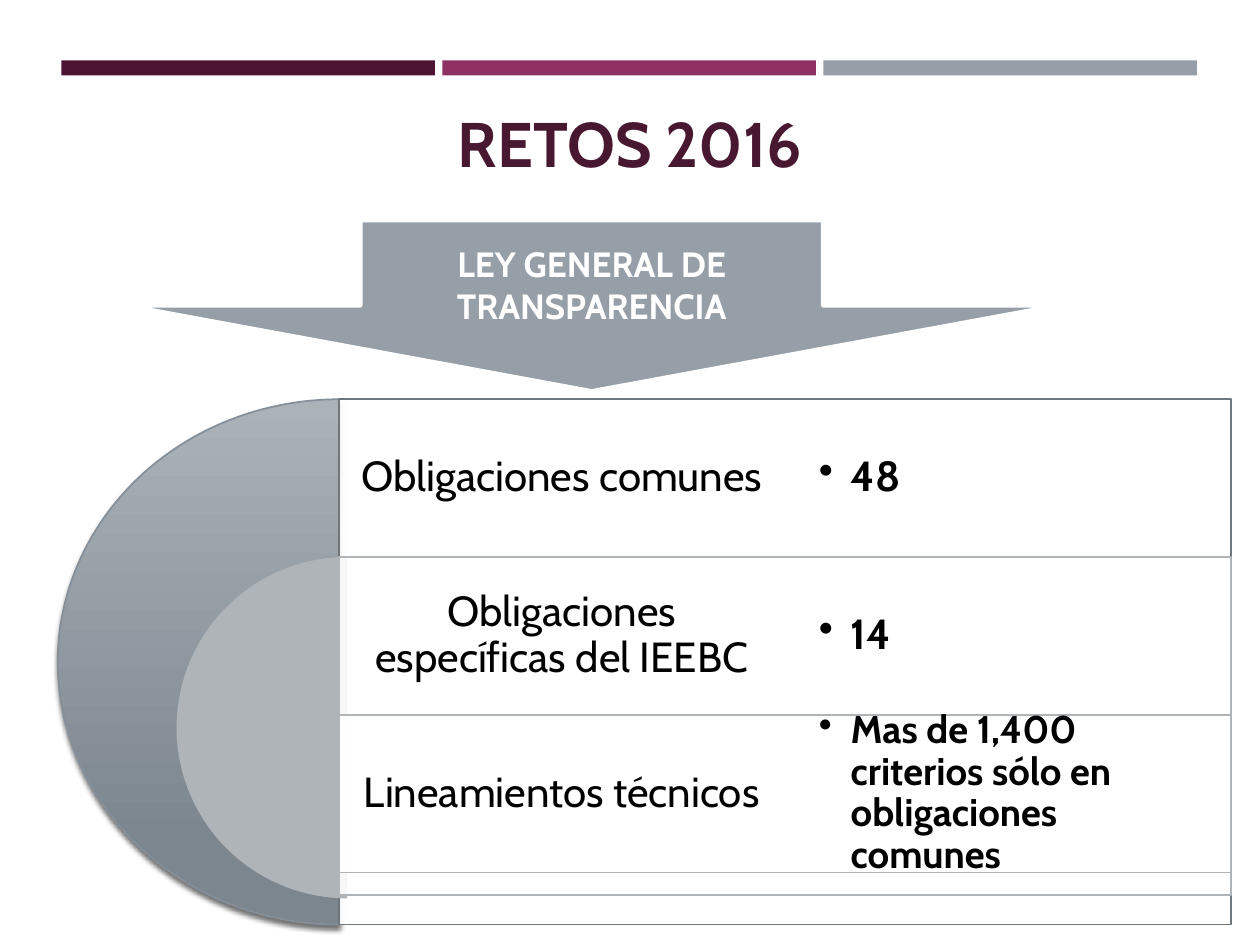
from dataclasses import dataclass

from lxml.etree import SubElement
from pptx import Presentation
from pptx.dml.color import RGBColor
from pptx.enum.shapes import MSO_SHAPE
from pptx.enum.text import MSO_ANCHOR, PP_ALIGN
from pptx.oxml.ns import qn
from pptx.util import Cm, Pt


@dataclass(frozen=True)
class Theme:
    font: str = "Cabin"
    plum: str = "4D1434"
    magenta: str = "903163"
    grey: str = "969FA7"
    title: str = "481831"
    white: str = "FFFFFF"
    black: str = "000000"
    pie: str = "AFB4B9"
    pie_light: str = "ABB2B8"
    pie_dark: str = "7C868F"
    pie_line: str = "858F99"
    outer_line: str = "6F767C"
    title_size: int = 36
    arrow_size: int = 20
    body_size: int = 24
    small_size: int = 22


@dataclass(frozen=True)
class Level:
    """One row of the target diagram; lengths in centimetres."""
    label: str
    value: str
    value_size: int
    pie_center: float
    pie_width: float
    pie_height: float
    panel_height: float
    panel_line: str


THEME = Theme()
LEVELS = (
    Level("Obligaciones comunes", "48", THEME.body_size,
          6.84, 11.35, 10.59, 10.59, THEME.outer_line),
    Level("Obligaciones específicas del IEEBC", "14", THEME.body_size,
          7.0, 6.88, 6.88, 6.81, THEME.pie),
    Level("Lineamientos técnicos",
          "Mas de 1,400 criterios sólo en obligaciones comunes",
          THEME.small_size, 6.84, 3.18, 3.18, 3.18, THEME.pie),
)
PANEL_LEFT, PANEL_TOP, PANEL_WIDTH = 6.83, 8.05, 17.98
ROW_HEIGHT = 3.18
COLUMN_WIDTH = PANEL_WIDTH / 2


def color(value: str) -> RGBColor:
    return RGBColor.from_string(value)


def add_shape(page, kind, left: float, top: float, width: float, height: float,
              fill: str, line: str | None = None, line_width: float = 1):
    shape = page.shapes.add_shape(kind, Cm(left), Cm(top), Cm(width), Cm(height))
    shape.shadow.inherit = False
    shape.fill.solid()
    shape.fill.fore_color.rgb = color(fill)
    if line:
        shape.line.color.rgb = color(line)
        shape.line.width = Pt(line_width)
    else:
        shape.line.fill.background()
    return shape


def write(frame, text: str, size: int, ink: str, bold: bool = False,
          align=PP_ALIGN.CENTER, anchor=MSO_ANCHOR.MIDDLE):
    frame.word_wrap = True
    frame.vertical_anchor = anchor
    frame.text = text
    paragraph = frame.paragraphs[0]
    paragraph.alignment = align
    font = paragraph.runs[0].font
    font.name, font.size, font.bold = THEME.font, Pt(size), bold
    font.color.rgb = color(ink)
    return paragraph


def add_text(page, left: float, top: float, margin: float, text: str, size: int,
             bold: bool = False, align=PP_ALIGN.CENTER):
    box = page.shapes.add_textbox(Cm(left), Cm(top), Cm(COLUMN_WIDTH), Cm(ROW_HEIGHT))
    frame = box.text_frame
    frame.margin_left = frame.margin_right = Cm(margin)
    frame.margin_top = frame.margin_bottom = Cm(margin)
    paragraph = write(frame, text, size, THEME.black, bold, align)
    paragraph.line_spacing = 0.9
    return paragraph


def add_bullet(paragraph) -> None:
    properties = paragraph._p.get_or_add_pPr()
    properties.set("marL", str(Cm(0.64)))
    properties.set("indent", str(-Cm(0.64)))
    SubElement(properties, qn("a:buChar"), char="•")


def shade_outer_pie(pie) -> None:
    """Give the largest half disc its gradient, outline and shadow."""
    pie.fill.gradient()
    pie.fill.gradient_angle = 270
    stops = ((0, THEME.pie_light), (0.84, THEME.pie_dark))
    for stop, (position, shade) in zip(pie.fill.gradient_stops, stops):
        stop.position = position
        stop.color.rgb = color(shade)
    pie.line.color.rgb = color(THEME.pie_line)
    pie.line.width = Pt(1)
    effects = pie._element.spPr.find(qn("a:effectLst"))
    shadow = SubElement(effects, qn("a:outerShdw"), blurRad=str(Pt(3)),
                        dist=str(Pt(2)), dir="5400000", rotWithShape="0")
    tone = SubElement(shadow, qn("a:srgbClr"), val=THEME.black)
    SubElement(tone, qn("a:alpha"), val="55000")


def add_level(page, index: int, level: Level) -> None:
    top = PANEL_TOP + index * ROW_HEIGHT
    pie = add_shape(page, MSO_SHAPE.PIE, level.pie_center - level.pie_width / 2, top,
                    level.pie_width, level.pie_height, THEME.pie)
    # Left half: from 90 to 270 degrees
    pie.adjustments[0], pie.adjustments[1] = 54, 162
    if index == 0:
        shade_outer_pie(pie)

    panel = add_shape(page, MSO_SHAPE.RECTANGLE, PANEL_LEFT, top, PANEL_WIDTH,
                      level.panel_height, THEME.white, level.panel_line)
    tone = panel._element.spPr.find(qn("a:solidFill"))[0]
    SubElement(tone, qn("a:alpha"), val="90000")

    add_text(page, PANEL_LEFT, top, 0.25, level.label, THEME.body_size)
    value = add_text(page, PANEL_LEFT + COLUMN_WIDTH, top, 0.69, level.value,
                     level.value_size, True, PP_ALIGN.LEFT)
    add_bullet(value)


def main() -> None:
    deck = Presentation()
    deck.slide_width, deck.slide_height = Cm(25.4), Cm(19.05)
    page = deck.slides.add_slide(deck.slide_layouts[5])

    # Three bars along the top
    for index, fill in enumerate((THEME.plum, THEME.magenta, THEME.grey)):
        add_shape(page, MSO_SHAPE.RECTANGLE, 1.24 + index * 7.68, 1.22, 7.53, 0.3, fill)

    # Title
    title = page.shapes.title
    title.left, title.top, title.width, title.height = Cm(0), Cm(1.9), Cm(25.4), Cm(1.86)
    write(title.text_frame, "RETOS 2016", THEME.title_size, THEME.title, True,
          anchor=MSO_ANCHOR.BOTTOM)

    # Arrow leading to the diagram
    arrow = add_shape(page, MSO_SHAPE.DOWN_ARROW, 2.62, 4.45, 18.62, 3.43,
                      THEME.grey, THEME.white, 2)
    write(arrow.text_frame, "LEY GENERAL DE TRANSPARENCIA", THEME.arrow_size,
          THEME.white, True)

    # Target diagram, from the outer level to the inner one
    for index, level in enumerate(LEVELS):
        add_level(page, index, level)

    deck.save("out.pptx")


if __name__ == "__main__":
    main()
